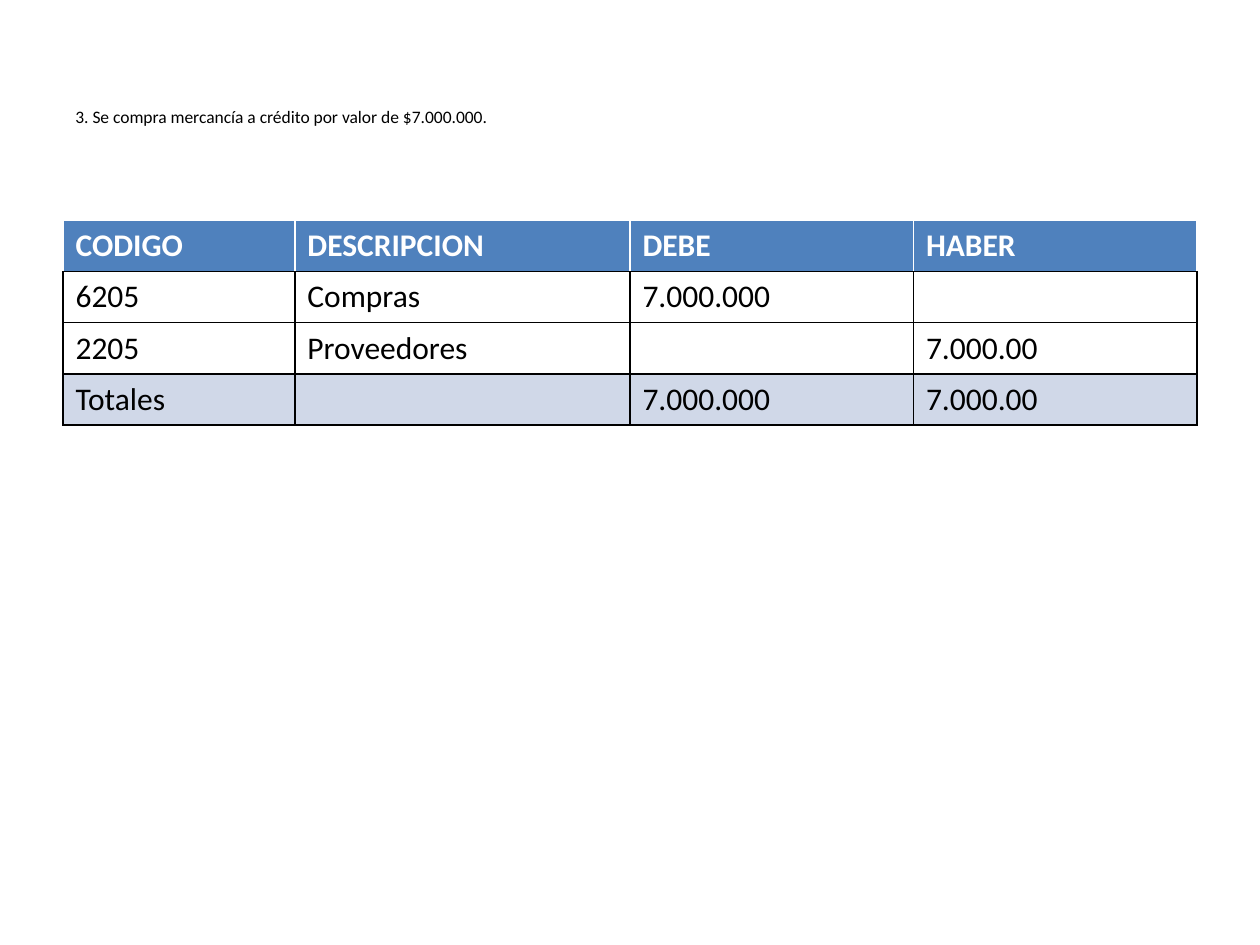
from lxml import etree
from pptx import Presentation
from pptx.dml.color import RGBColor
from pptx.enum import text
from pptx.oxml.ns import qn
from pptx.util import Pt

COLORS = {"ink": "000000", "paper": "FFFFFF", "header": "4F81BD", "total": "D0D8E8"}


class LedgerSlide:
    font = "Calibri"

    def __init__(self, slide):
        self.slide = slide

    def style(self, paragraph, size, color, bold=False):
        font = paragraph.font
        font.name = self.font
        font.size = Pt(size)
        font.bold = bold
        font.color.rgb = RGBColor.from_string(COLORS[color])

    def statement(self, wording, left, top, width, height):
        frame = self.slide.shapes.add_textbox(Pt(left), Pt(top), Pt(width), Pt(height)).text_frame
        frame.word_wrap = True
        frame.vertical_anchor = text.MSO_ANCHOR.MIDDLE
        paragraph = frame.paragraphs[0]
        paragraph.text = wording
        paragraph.alignment = text.PP_ALIGN.JUSTIFY
        self.style(paragraph, 10, "ink")

    def border(self, cell, side, color):
        properties = cell._tc.get_or_add_tcPr()
        line = etree.SubElement(properties, qn(f"a:ln{side}"), w=str(Pt(1)))
        fill = etree.SubElement(line, qn("a:solidFill"))
        etree.SubElement(fill, qn("a:srgbClr"), val=COLORS[color])

    def entry(self, cell, wording, ink, fill, borders):
        paragraph = cell.text_frame.paragraphs[0]
        if wording:
            paragraph.text = wording
        self.style(paragraph, 18, ink, bold=fill == "header")
        for side, color in borders.items():
            self.border(cell, side, color)
        if fill:
            cell.fill.solid()
            cell.fill.fore_color.rgb = RGBColor.from_string(COLORS[fill])
        else:
            cell.fill.background()

    def ledger(self, entries, left, top, widths, row_height):
        table = self.slide.shapes.add_table(
            len(entries), len(widths), Pt(left), Pt(top),
            Pt(sum(widths)), Pt(row_height * len(entries))).table
        table.horz_banding = False
        for column, width in zip(table.columns, widths):
            column.width = Pt(width)
        fills = ["header"] + [None] * (len(entries) - 2) + ["total"]
        for row, wordings, fill in zip(table.rows, entries, fills):
            row.height = Pt(row_height)
            is_header = fill == "header"
            ink = "paper" if is_header else "ink"
            borders = dict.fromkeys("LRT", ink) | {"B": "ink"}
            if wordings is entries[1]:
                borders["T"] = "ink"
            for cell, wording in zip(row.cells, wordings):
                self.entry(cell, wording, ink, fill, borders)


def main():
    deck = Presentation()
    deck.slide_width, deck.slide_height = Pt(720), Pt(540)
    page = LedgerSlide(deck.slides.add_slide(deck.slide_layouts[6]))
    page.statement("3. Se compra mercancía a crédito por valor de $7.000.000.", 36, 21.6, 648, 90)
    page.ledger(
        [
            ["CODIGO", "DESCRIPCION", "DEBE", "HABER"],
            ["6205", "Compras", "7.000.000", ""],
            ["2205", "Proveedores", "", "7.000.00"],
            ["Totales", "", "7.000.000", "7.000.00"],
        ],
        36, 126, [132.5, 191.5, 162, 162], 29.2)
    deck.save("out.pptx")


if __name__ == "__main__":
    main()
